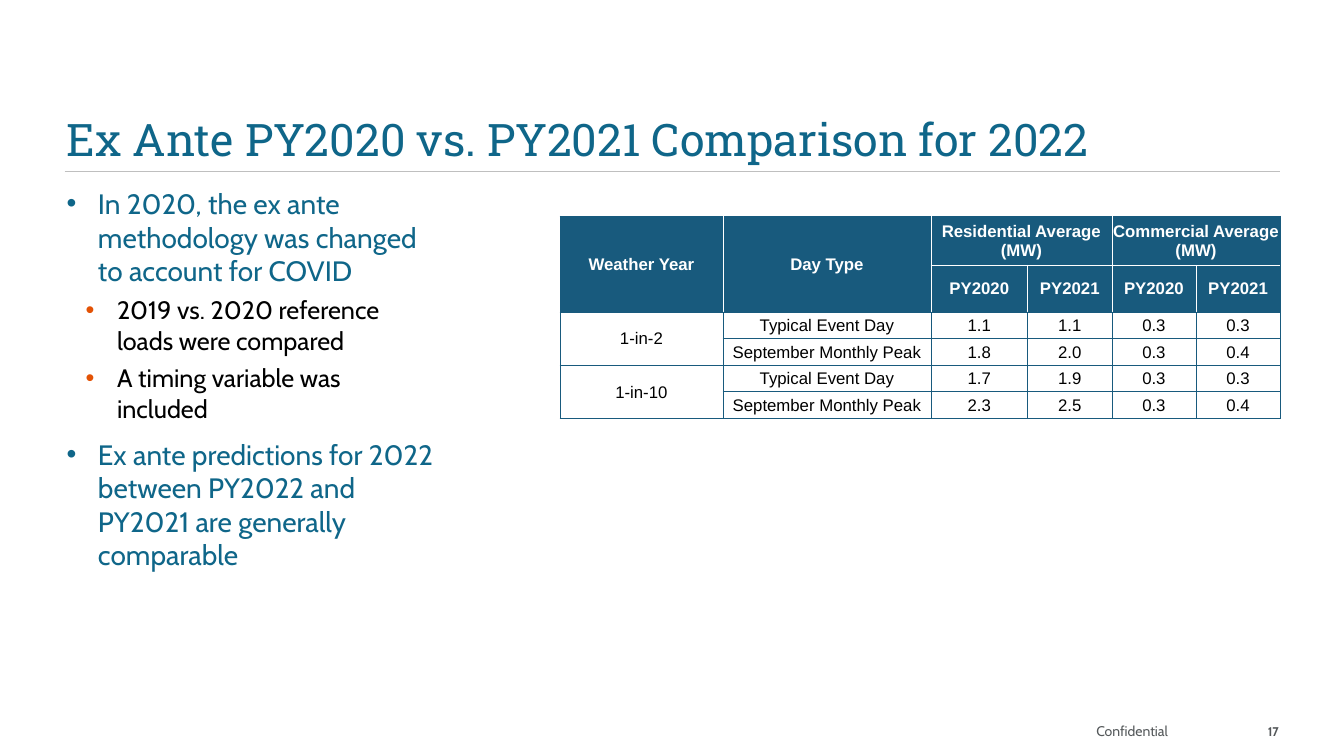
from lxml import etree
from pptx import Presentation
from pptx.dml.color import RGBColor
from pptx.enum.shapes import MSO_CONNECTOR
from pptx.enum.text import MSO_ANCHOR, MSO_AUTO_SIZE, PP_ALIGN
from pptx.oxml.ns import qn
from pptx.util import Cm, Pt

LEFT, CENTER, RIGHT = PP_ALIGN.LEFT, PP_ALIGN.CENTER, PP_ALIGN.RIGHT
TOP, MIDDLE, BOTTOM = MSO_ANCHOR.TOP, MSO_ANCHOR.MIDDLE, MSO_ANCHOR.BOTTOM
NO_AUTOFIT = MSO_AUTO_SIZE.NONE
STRAIGHT = MSO_CONNECTOR.STRAIGHT

TEAL, NAVY, ORANGE = "0F6689", "185A7D", "E35205"
BLACK, WHITE, GRAY, RULE_GRAY = "000000", "FFFFFF", "54585A", "BFBFBF"
TITLE_FONT, BODY_FONT, TABLE_FONT = "Roboto Slab", "Cabin", "Arial"

BULLET_LEVELS = [
    {"indent": 0.79, "before": 10, "size": 20, "color": TEAL, "bullet": TEAL},
    {"indent": 1.27, "before": 5.3, "size": 18, "color": BLACK, "bullet": ORANGE},
]
BULLETS = [
    (0, "In 2020, the ex ante methodology was changed to account for COVID"),
    (1, "2019 vs. 2020 reference loads were compared"),
    (1, "A timing variable was included"),
    (0, "Ex ante predictions for 2022 between PY2022 and PY2021 are generally comparable"),
]

HEADER_ROWS = 2
COLUMN_WIDTHS = [4.11, 5.24, 2.44, 2.12, 2.12, 2.12]
ROW_HEIGHTS = [1.23, 1.18] + [0.67] * 4
TABLE_ROWS = [
    ["Weather Year", "Day Type", "Residential Average (MW)", "", "Commercial Average (MW)", ""],
    ["", "", "PY2020", "PY2021", "PY2020", "PY2021"],
    ["1-in-2", "Typical Event Day", "1.1", "1.1", "0.3", "0.3"],
    ["", "September Monthly Peak", "1.8", "2.0", "0.3", "0.4"],
    ["1-in-10", "Typical Event Day", "1.7", "1.9", "0.3", "0.3"],
    ["", "September Monthly Peak", "2.3", "2.5", "0.3", "0.4"],
]
MERGES = [
    ((0, 0), (1, 0)), ((0, 1), (1, 1)), ((0, 2), (0, 3)),
    ((0, 4), (0, 5)), ((2, 0), (3, 0)), ((4, 0), (5, 0)),
]


def rgb(color):
    return RGBColor.from_string(color)


def set_attributes(target, values):
    for name, value in values.items():
        setattr(target, name, value)


def add_color(parent, color):
    fill = etree.SubElement(parent, qn("a:solidFill"))
    etree.SubElement(fill, qn("a:srgbClr"), val=color)


def format_font(paragraph, name, size, color, bold=False):
    set_attributes(paragraph.font, {"name": name, "size": Pt(size), "bold": bold})
    paragraph.font.color.rgb = rgb(color)


def place(shape, left, top, width, height):
    set_attributes(shape, {"left": Cm(left), "top": Cm(top),
                           "width": Cm(width), "height": Cm(height)})


def format_frame(frame, anchor, left=0, right=0):
    set_attributes(frame, {
        "word_wrap": True, "auto_size": NO_AUTOFIT, "vertical_anchor": anchor,
        "margin_left": Cm(left), "margin_right": Cm(right),
        "margin_top": Cm(0.13), "margin_bottom": Cm(0.13),
    })


def add_title(slide, text):
    title = slide.shapes.title
    place(title, 1.68, 1.78, 30.5, 2.54)
    title.text_frame.text = text
    format_frame(title.text_frame, BOTTOM, right=3.81)
    paragraph = title.text_frame.paragraphs[0]
    set_attributes(paragraph, {"alignment": LEFT, "line_spacing": 0.9})
    format_font(paragraph, TITLE_FONT, 32, TEAL)


def add_rule(slide):
    rule = slide.shapes.add_connector(STRAIGHT, Cm(1.63), Cm(4.32), Cm(32.26), Cm(4.32))
    rule.line.color.rgb = rgb(RULE_GRAY)
    rule.line.width = Pt(1)
    etree.SubElement(rule._element.spPr, qn("a:effectLst"))


def add_bullets(slide):
    box = slide.shapes.add_textbox(Cm(1.68), Cm(4.57), Cm(9.53), Cm(12.34))
    frame = box.text_frame
    format_frame(frame, TOP, right=0.25)
    for index, (level, text) in enumerate(BULLETS):
        style = BULLET_LEVELS[level]
        paragraph = frame.add_paragraph() if index else frame.paragraphs[0]
        paragraph.text = text
        paragraph.level = level
        paragraph.space_before = Pt(style["before"] if index else 0)
        properties = paragraph._p.get_or_add_pPr()
        properties.set("marL", str(Cm(style["indent"])))
        properties.set("indent", str(-Cm(0.79)))
        bullet_color = etree.SubElement(properties, qn("a:buClr"))
        etree.SubElement(bullet_color, qn("a:srgbClr"), val=style["bullet"])
        etree.SubElement(properties, qn("a:buFont"), typeface="Arial")
        etree.SubElement(properties, qn("a:buChar"), char="•")
        format_font(paragraph, BODY_FONT, style["size"], style["color"])


def add_footer(slide, text, left, width, size, alignment, bold):
    box = slide.shapes.add_textbox(Cm(left), Cm(17.73), Cm(width), Cm(1.02))
    format_frame(box.text_frame, BOTTOM, left=0.25)
    paragraph = box.text_frame.paragraphs[0]
    paragraph.text = text
    paragraph.alignment = alignment
    format_font(paragraph, BODY_FONT, size, GRAY, bold)


def add_borders(cell, row, column):
    last_row = row + cell.span_height - 1
    last_column = column + cell.span_width - 1
    header = row < HEADER_ROWS
    inner_sides = {
        "L": column > 0,
        "R": last_column < len(COLUMN_WIDTHS) - 1,
        "T": row > 0,
        "B": last_row < HEADER_ROWS - 1,
    }
    properties = cell._tc.get_or_add_tcPr()
    for side, inner in inner_sides.items():
        border = etree.SubElement(properties, qn("a:ln" + side), w=str(Pt(0.5)))
        touches_body = side == "T" and row == HEADER_ROWS
        add_color(border, WHITE if header and inner and not touches_body else NAVY)


def format_cell(cell, text, row, column):
    header = row < HEADER_ROWS
    set_attributes(cell, {
        "vertical_anchor": MIDDLE, "margin_left": Cm(0.03), "margin_right": Cm(0.03),
        "margin_top": Cm(0.03), "margin_bottom": Cm(0),
    })
    paragraph = cell.text_frame.paragraphs[0]
    if text:
        paragraph.text = text
    paragraph.alignment = CENTER
    format_font(paragraph, TABLE_FONT, 12, WHITE if header else BLACK, header)
    add_borders(cell, row, column)
    if header:
        cell.fill.solid()
        cell.fill.fore_color.rgb = rgb(NAVY)
    else:
        cell.fill.background()


def add_comparison_table(slide):
    table = slide.shapes.add_table(
        len(ROW_HEIGHTS), len(COLUMN_WIDTHS), Cm(14.11), Cm(5.45),
        Cm(sum(COLUMN_WIDTHS)), Cm(sum(ROW_HEIGHTS))).table
    for column, width in zip(table.columns, COLUMN_WIDTHS):
        column.width = Cm(width)
    for row, height in zip(table.rows, ROW_HEIGHTS):
        row.height = Cm(height)
    for first, last in MERGES:
        table.cell(*first).merge(table.cell(*last))
    for row, texts in enumerate(TABLE_ROWS):
        for column, text in enumerate(texts):
            format_cell(table.cell(row, column), text, row, column)


def main():
    presentation = Presentation()
    presentation.slide_width = Cm(33.87)
    presentation.slide_height = Cm(19.05)
    slide = presentation.slides.add_slide(presentation.slide_layouts[5])
    add_rule(slide)
    add_title(slide, "Ex Ante PY2020 vs. PY2021 Comparison for 2022")
    add_bullets(slide)
    add_comparison_table(slide)
    add_footer(slide, "Confidential", 27.38, 3.28, 10, LEFT, False)
    add_footer(slide, "17", 30.78, 1.45, 9, RIGHT, True)
    presentation.save("out.pptx")


if __name__ == "__main__":
    main()
